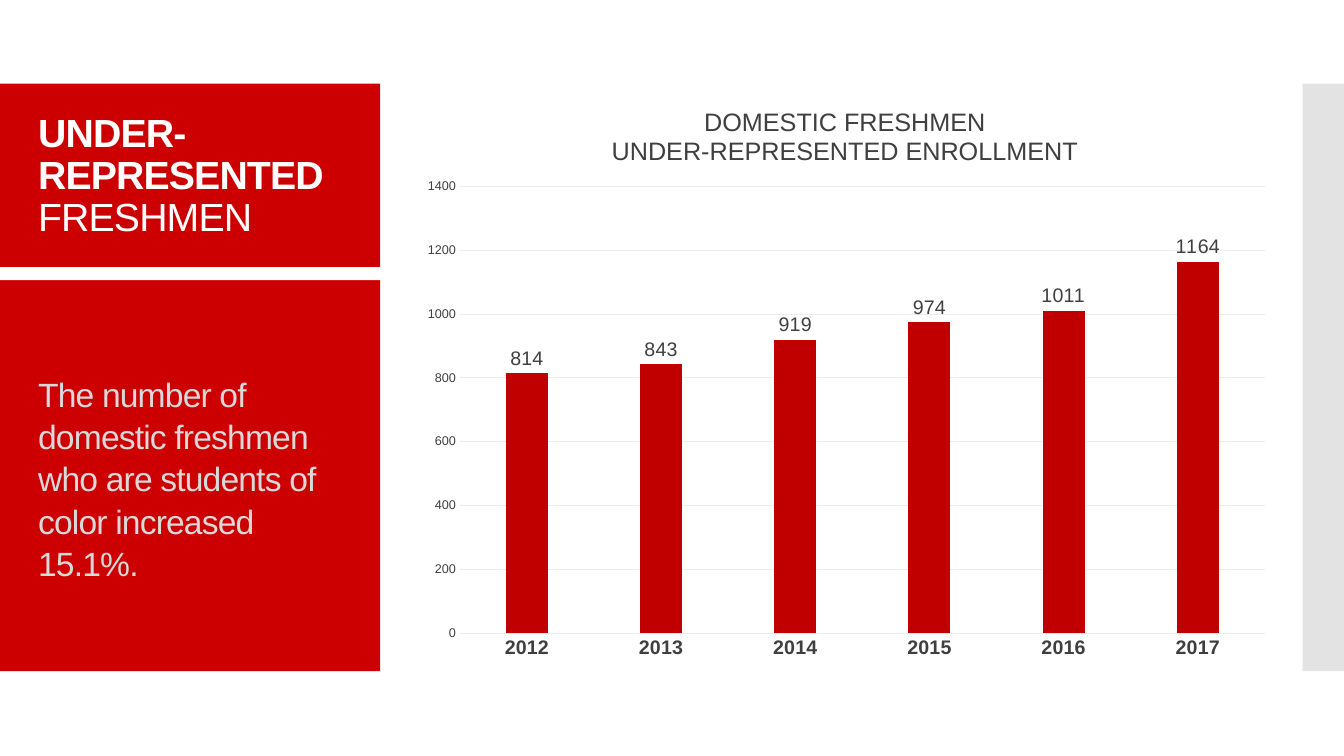
from lxml import etree
from pptx import Presentation
from pptx import util as u
from pptx.chart import data
from pptx.dml.color import RGBColor
from pptx.enum import chart as ch, shapes, text
from pptx.oxml import parse_xml
from pptx.oxml.ns import nsdecls, qn


class Deck:
    """Holds the style and the current slide."""

    face = "Arial"
    hues = {"red": "CC0000", "bar": "C00000", "white": "FFFFFF", "gray": "C8C8C8",
            "pale": "D9D9D9", "ink": "3F3F3F", "grid": "ECECEC"}

    def __init__(self):
        self.prs = Presentation()
        self.prs.slide_width = u.Inches(13.33)
        self.prs.slide_height = u.Inches(7.5)
        self.slide = self.prs.slides.add_slide(self.prs.slide_layouts[6])

    def hue(self, name):
        return RGBColor.from_string(self.hues[name])

    def paint(self, fill, name):
        fill.solid()
        fill.fore_color.rgb = self.hue(name)

    def style(self, font, size, name="ink", bold=False):
        font.name, font.size, font.bold = self.face, u.Pt(size), bold
        font.color.rgb = self.hue(name)

    def rule(self, line):
        line.color.rgb = self.hue("grid")
        line.width = u.Pt(0.75)

    def rect(self, box, name, alpha=None):
        shape = self.slide.shapes.add_shape(shapes.MSO_SHAPE.RECTANGLE, *map(u.Inches, box))
        shape.shadow.inherit = False
        self.paint(shape.fill, name)
        shape.line.fill.background()
        if alpha:
            tone = shape.fill._xPr.find(".//" + qn("a:srgbClr"))
            etree.SubElement(tone, qn("a:alpha")).set("val", str(alpha * 1000))

    def words(self, box, runs, size, name, gap):
        frame = self.slide.shapes.add_textbox(*map(u.Inches, box)).text_frame
        frame.word_wrap = True
        frame.vertical_anchor = text.MSO_ANCHOR.MIDDLE
        para = frame.paragraphs[0]
        para.line_spacing = gap
        for words, bold in runs:
            run = para.add_run()
            run.text = words
            self.style(run.font, size, name, bold)
            run.font._element.set("spc", "-60")

    def bars(self, box, title, cats, vals):
        sheet = data.CategoryChartData()
        sheet.categories = cats
        sheet.add_series("Series 1", vals)
        chart = self.slide.shapes.add_chart(
            ch.XL_CHART_TYPE.COLUMN_CLUSTERED, *map(u.Inches, box), sheet).chart
        self.style(chart.font, 10)
        chart.has_legend = False
        frame = chart.chart_title.text_frame
        frame.text = title
        for para in frame.paragraphs:
            self.style(para.font, 18)
        chart.chart_title.include_in_layout = False

        plot = chart.plots[0]
        plot.gap_width, plot.overlap = 219, -27
        plot.vary_by_categories = False
        self.paint(plot.series[0].format.fill, "bar")
        labels = plot.series[0].data_labels
        labels.show_value = True
        labels.position = ch.XL_LABEL_POSITION.OUTSIDE_END
        self.style(labels.font, 14)

        for axis, size, bold in ((chart.category_axis, 14, True), (chart.value_axis, 9, False)):
            axis.major_tick_mark = axis.minor_tick_mark = ch.XL_TICK_MARK.NONE
            self.style(axis.tick_labels.font, size, bold=bold)
        self.rule(chart.category_axis.format.line)
        axis.format.line.fill.background()
        self.rule(axis.major_gridlines.format.line)
        axis.minimum_scale, axis.maximum_scale, axis.major_unit = 0, 1400, 200
        self.place(chart, x=0.06, y=0.17, w=0.92, h=0.76)

    def place(self, chart, **spots):
        area = chart._chartSpace.chart.plotArea
        for old in area.findall(qn("c:layout")):
            area.remove(old)
        parts = "".join(f'<c:{key} val="{val}"/>' for key, val in spots.items())
        area.insert(0, parse_xml(
            f'<c:layout {nsdecls("c")}><c:manualLayout><c:layoutTarget val="inner"/>'
            f'<c:xMode val="edge"/><c:yMode val="edge"/>{parts}</c:manualLayout></c:layout>'))


def main():
    deck = Deck()
    deck.rect((0, 0.83, 3.77, 5.83), "red")
    deck.rect((12.92, 0.83, 0.41, 5.83), "gray", 50)
    deck.words((0.28, 0.86, 3.48, 1.79),
               [("UNDER-REPRESENTED ", True), ("FRESHMEN", False)], 28, "white", 0.9)
    deck.words((0.28, 2.78, 3.22, 3.91),
               [("The number of domestic freshmen who are students of color increased 15.1%.",
                 False)], 24, "pale", 1.05)
    deck.rect((0, 2.65, 3.86, 0.13), "white")
    deck.bars((4.04, 0.86, 8.68, 5.83), "DOMESTIC FRESHMEN\nUNDER-REPRESENTED ENROLLMENT",
              [str(year) for year in range(2012, 2018)], (814, 843, 919, 974, 1011, 1164))
    deck.prs.save("out.pptx")


if __name__ == "__main__":
    main()
